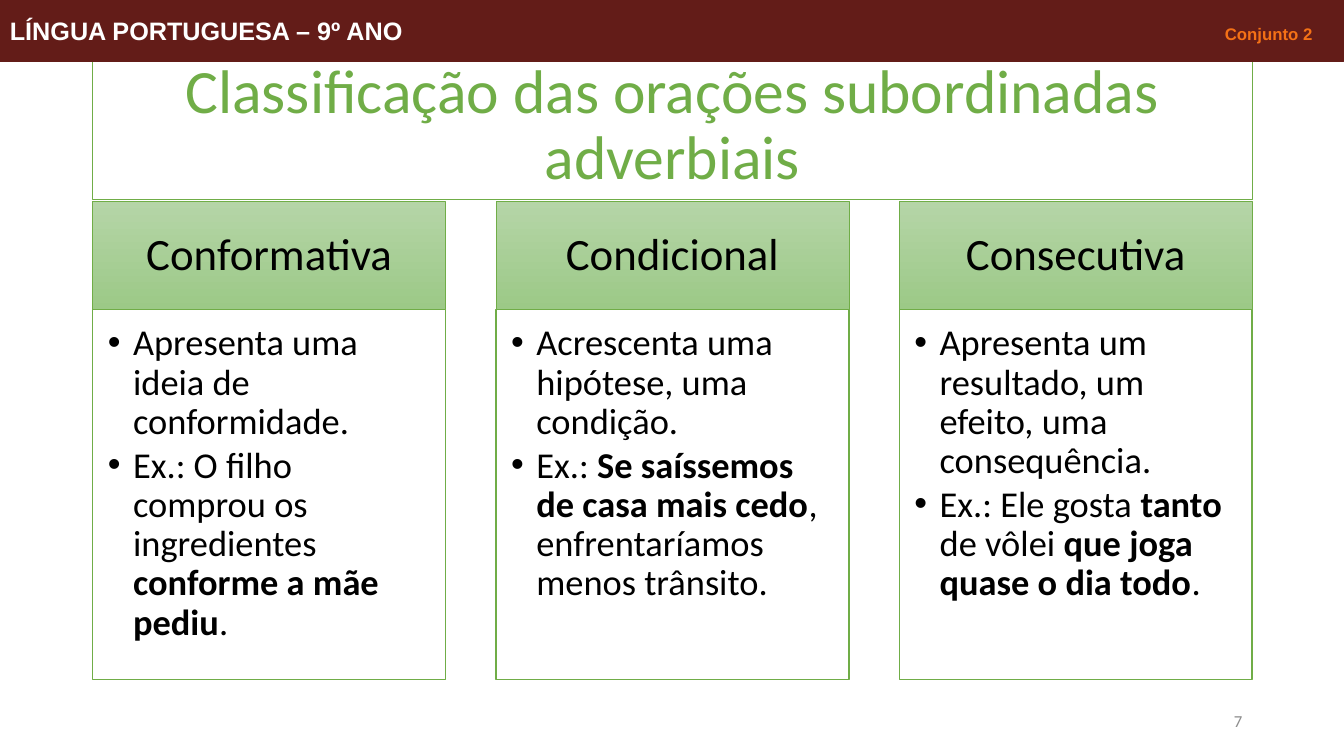
from lxml.etree import SubElement
from pptx import Presentation
from pptx.dml.color import RGBColor
from pptx.enum.shapes import MSO_SHAPE
from pptx.enum.text import MSO_ANCHOR, MSO_AUTO_SIZE, PP_ALIGN
from pptx.oxml.ns import qn
from pptx.util import Inches, Pt

WIDTH, HEIGHT = 13.33, 7.5
MARGIN = 0.92
CONTENT_WIDTH = 11.5
CARD_WIDTH = 3.5
HEAD_HEIGHT = 1.07
COLORS = {
    "green": "70AD47", "head_top": "B5D5A7", "head_bottom": "9CC987",
    "maroon": "631C18", "orange": "F47116", "gray": "8C8C8C",
    "black": "000000", "white": "FFFFFF",
}
# Asterisks enclose the bold words.
CLAUSES = [
    ("Conformativa", [
        "Apresenta uma ideia de conformidade.",
        "Ex.: O filho comprou os ingredientes *conforme a mãe pediu*."]),
    ("Condicional", [
        "Acrescenta uma hipótese, uma condição.",
        "Ex.: *Se saíssemos de casa mais cedo*, enfrentaríamos menos trânsito."]),
    ("Consecutiva", [
        "Apresenta um resultado, um efeito, uma consequência.",
        "Ex.: Ele gosta *tanto* de vôlei *que joga quase o dia todo*."]),
]


def color(name):
    return RGBColor.from_string(COLORS[name])


def add_span(para, text, size, ink, bold=False, font="Calibri"):
    span = para.add_run()
    span.text = text
    span.font.size = Pt(size)
    span.font.name = font
    span.font.bold = bold
    span.font.color.rgb = color(ink)


def set_frame(shape, anchor, insets=(0.1, 0.05, 0.1, 0.05)):
    """Set wrapping, anchor and the left, top, right and bottom insets."""
    frame = shape.text_frame
    frame.word_wrap = True
    frame.auto_size = MSO_AUTO_SIZE.NONE
    frame.vertical_anchor = anchor
    (frame.margin_left, frame.margin_top,
     frame.margin_right, frame.margin_bottom) = map(Inches, insets)
    return frame


def set_line(shape, ink, width):
    shape.line.color.rgb = color(ink)
    shape.line.width = Pt(width)


def add_box(page, box, ink, line_width):
    shape = page.shapes.add_shape(MSO_SHAPE.RECTANGLE, *map(Inches, box))
    shape.shadow.inherit = False
    set_line(shape, ink, line_width)
    return shape


def set_bullet(para, indent):
    props = para._p.get_or_add_pPr()
    props.set("marL", str(Inches(indent)))
    props.set("indent", str(-Inches(indent)))
    SubElement(props, qn("a:buFont")).set("typeface", "Arial")
    SubElement(props, qn("a:buChar")).set("char", "•")


def add_title(page, box):
    title = page.shapes.title
    title.left, title.top, title.width, title.height = map(Inches, box)
    set_line(title, "green", 0.75)
    para = set_frame(title, MSO_ANCHOR.MIDDLE).paragraphs[0]
    para.alignment = PP_ALIGN.CENTER
    para.line_spacing = 0.9
    add_span(para, "Classificação das orações subordinadas adverbiais", 44, "green")


def add_card(page, box, name, points):
    left, top, width, height = box
    head = add_box(page, (left, top, width, HEAD_HEIGHT), "green", 0.5)
    head.fill.gradient()
    head.fill.gradient_angle = 270
    for stop, shade in zip(head.fill.gradient_stops, ("head_top", "head_bottom")):
        stop.color.rgb = color(shade)
    para = set_frame(head, MSO_ANCHOR.MIDDLE, (0.25, 0.14, 0.25, 0.14)).paragraphs[0]
    para.alignment = PP_ALIGN.CENTER
    para.line_spacing = 0.9
    add_span(para, name, 32, "black")

    body = add_box(page, (left, top + HEAD_HEIGHT, width, height - HEAD_HEIGHT), "green", 1)
    body.fill.solid()
    body.fill.fore_color.rgb = color("white")
    frame = set_frame(body, MSO_ANCHOR.TOP, (0.15, 0.15, 0.2, 0.23))
    for number, point in enumerate(points):
        para = frame.add_paragraph() if number else frame.paragraphs[0]
        para.alignment = PP_ALIGN.LEFT
        para.line_spacing = 0.9
        para.space_after = Pt(3)
        set_bullet(para, 0.25)
        for order, text in enumerate(point.split("*")):
            add_span(para, text, 26, "black", bold=order % 2 == 1)


def add_cards(page, box):
    left, top, width, height = box
    step = (width - CARD_WIDTH) / (len(CLAUSES) - 1)
    for column, (name, points) in enumerate(CLAUSES):
        add_card(page, (left + column * step, top, CARD_WIDTH, height), name, points)


def add_page_number(page, box):
    shape = page.shapes.add_textbox(*map(Inches, box))
    para = set_frame(shape, MSO_ANCHOR.MIDDLE).paragraphs[0]
    para.alignment = PP_ALIGN.RIGHT
    add_span(para, "7", 12, "gray")


def add_banner(page, box):
    """Draw the top band, with the set name at a right-aligned tab stop."""
    banner = add_box(page, box, "maroon", 0.75)
    banner.fill.solid()
    banner.fill.fore_color.rgb = color("maroon")
    para = set_frame(banner, MSO_ANCHOR.MIDDLE).paragraphs[0]
    para.alignment = PP_ALIGN.LEFT
    tabs = SubElement(para._p.get_or_add_pPr(), qn("a:tabLst"))
    tab = SubElement(tabs, qn("a:tab"))
    tab.set("pos", str(Inches(box[2] - 0.41)))
    tab.set("algn", "r")
    add_span(para, "LÍNGUA PORTUGUESA – 9º ANO\t", 18, "white", True, "Arial")
    add_span(para, "Conjunto 2", 12, "orange", True, "Arial")


def main():
    deck = Presentation()
    deck.slide_width, deck.slide_height = Inches(WIDTH), Inches(HEIGHT)
    page = deck.slides.add_slide(deck.slide_layouts[5])
    add_title(page, (MARGIN, 0.53, CONTENT_WIDTH, 1.45))
    add_cards(page, (MARGIN, 2, CONTENT_WIDTH, 4.74))
    add_page_number(page, (MARGIN + CONTENT_WIDTH - 3, 6.95, 3, 0.4))
    add_banner(page, (0, 0, WIDTH, 0.61))
    deck.save("out.pptx")


if __name__ == "__main__":
    main()
